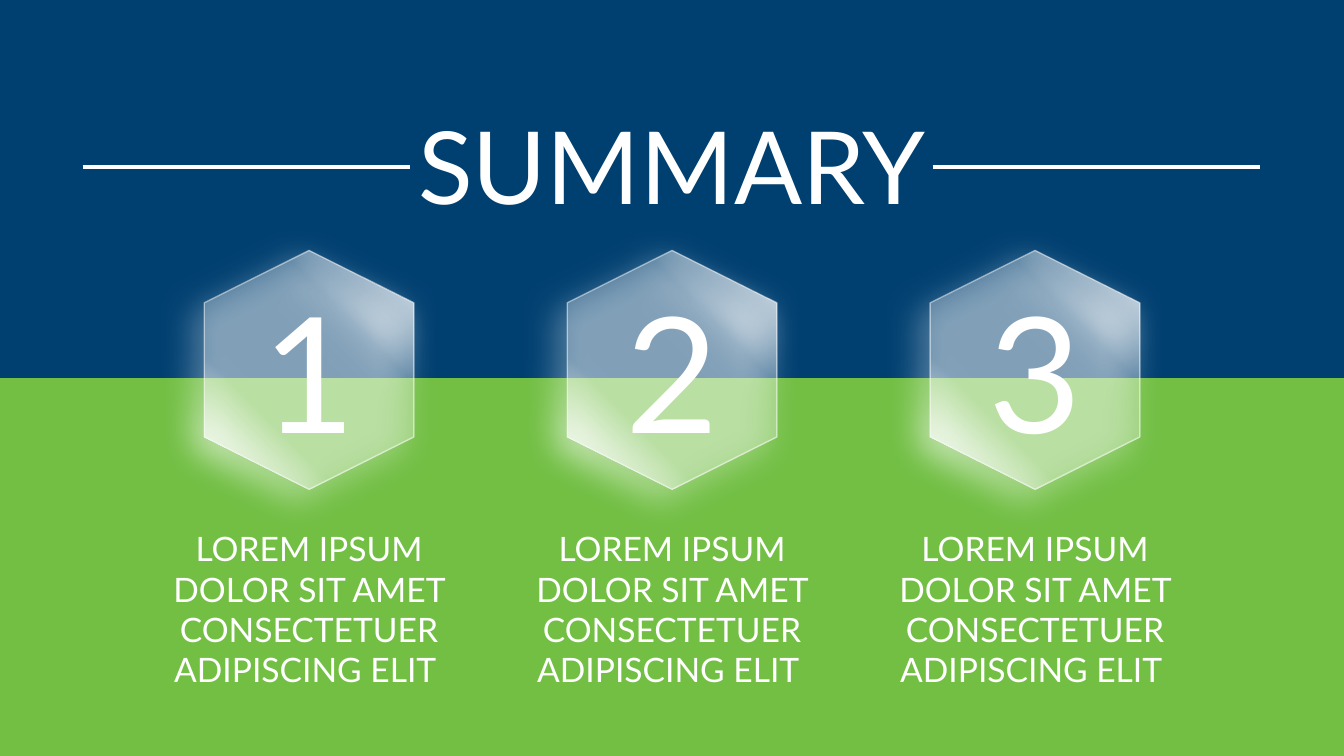
from dataclasses import dataclass

from pptx import Presentation
from pptx.dml.color import RGBColor
from pptx.enum.shapes import MSO_AUTO_SHAPE_TYPE, MSO_CONNECTOR
from pptx.enum.text import MSO_AUTO_SIZE, PP_ALIGN
from pptx.oxml import parse_xml
from pptx.oxml.ns import nsdecls, qn
from pptx.oxml.xmlchemy import OxmlElement
from pptx.shapes.autoshape import Shape
from pptx.util import Pt

RECT = MSO_AUTO_SHAPE_TYPE.RECTANGLE
HEXAGON = MSO_AUTO_SHAPE_TYPE.HEXAGON
STRAIGHT = MSO_CONNECTOR.STRAIGHT
CENTER = PP_ALIGN.CENTER
GROW = MSO_AUTO_SIZE.SHAPE_TO_FIT_TEXT

BLUE = RGBColor(0x00, 0x40, 0x71)
GREEN = RGBColor(0x72, 0xBF, 0x44)
WHITE = RGBColor(0xFF, 0xFF, 0xFF)

PX = 9144  # 100 px to the inch
WIDTH, HEIGHT = 1333, 750
LEFT, PITCH = 188, 360
RULE_Y, RULE_LEN = 166, 325
BODY = "LOREM IPSUM\vDOLOR SIT AMET CONSECTETUER ADIPISCING ELIT "

STOPS = ((0, 100), (30, 30), (70, 30), (100, 100))  # position, opacity


@dataclass(frozen=True)
class Box:
    x: int
    y: int
    w: int
    h: int

    def emu(self) -> tuple[int, int, int, int]:
        return self.x * PX, self.y * PX, self.w * PX, self.h * PX


@dataclass(frozen=True)
class Band:
    box: Box
    color: RGBColor


@dataclass(frozen=True)
class Item:
    number: str
    text: str


BANDS = (
    Band(Box(0, 0, WIDTH, 458), BLUE),
    Band(Box(0, 375, WIDTH, 375), GREEN),
)
ITEMS = tuple(Item(number, BODY) for number in "123")


def add_band(shapes, band: Band) -> None:
    shape = shapes.add_shape(RECT, *band.box.emu())
    shape.shadow.inherit = False
    shape.fill.solid()
    shape.fill.fore_color.rgb = band.color
    shape.line.fill.background()


def add_text(shapes, box: Box, text: str, size: int) -> None:
    frame = shapes.add_textbox(*box.emu()).text_frame
    for name, value in {"word_wrap": True, "auto_size": GROW, "text": text}.items():
        setattr(frame, name, value)
    line = frame.paragraphs[0]
    line.alignment = CENTER
    for run in line.runs:
        for name, value in {"name": "Lato", "size": Pt(size)}.items():
            setattr(run.font, name, value)
        run.font.color.rgb = WHITE


def add_rule(shapes, x: int) -> None:
    rule = shapes.add_connector(
        STRAIGHT, x * PX, RULE_Y * PX, (x + RULE_LEN) * PX, RULE_Y * PX
    )
    rule.line.color.rgb = WHITE
    rule.line.width = Pt(3)
    rule._element.spPr.append(OxmlElement("a:effectLst"))


def add_glass(shape: Shape) -> None:
    """Give the shape a see-through gradient, a half-clear edge and a glow-like shadow."""
    props = shape._element.spPr
    stops = "".join(
        f'<a:gs pos="{pos * 1000}"><a:srgbClr val="{WHITE}">'
        f'<a:alpha val="{alpha * 1000}"/></a:srgbClr></a:gs>'
        for pos, alpha in STOPS
    )
    shape.fill.gradient()
    props.replace(
        props.find(qn("a:gradFill")),
        parse_xml(
            f'<a:gradFill {nsdecls("a")} rotWithShape="1"><a:gsLst>{stops}</a:gsLst>'
            '<a:lin ang="2700000" scaled="0"/></a:gradFill>'
        ),
    )
    shape.line.color.rgb = WHITE
    shape.line.width = Pt(1)
    alpha = OxmlElement("a:alpha")
    alpha.set("val", "50000")
    props.find(qn("a:ln")).find(".//" + qn("a:srgbClr")).append(alpha)
    shape.shadow.inherit = False
    props.find(qn("a:effectLst")).append(
        parse_xml(
            f'<a:outerShdw {nsdecls("a")} blurRad="{Pt(24)}" dist="{Pt(11)}" '
            f'dir="8100000" algn="tr" rotWithShape="0"><a:srgbClr val="{WHITE}"/>'
            "</a:outerShdw>"
        )
    )


def add_item(shapes, item: Item, x: int) -> None:
    group = shapes.add_group_shape().shapes
    add_text(group, Box(x - 36, 519, 309, 172), item.text, 24)
    tile = group.add_shape(HEXAGON, *Box(x, 263, 237, 208).emu())
    tile.rotation = 90
    add_glass(tile)
    add_text(group, Box(x + 1, 265, 236, 204), item.number, 115)


def main() -> None:
    deck = Presentation()
    deck.slide_width, deck.slide_height = WIDTH * PX, HEIGHT * PX
    shapes = deck.slides.add_slide(deck.slide_layouts[6]).shapes
    for band in BANDS:
        add_band(shapes, band)
    for index, item in enumerate(ITEMS):
        add_item(shapes, item, LEFT + index * PITCH)
    for x in (82, 925):
        add_rule(shapes, x)
    add_text(shapes, Box(0, 98, WIDTH, 131), "SUMMARY", 72)
    deck.save("out.pptx")


if __name__ == "__main__":
    main()
